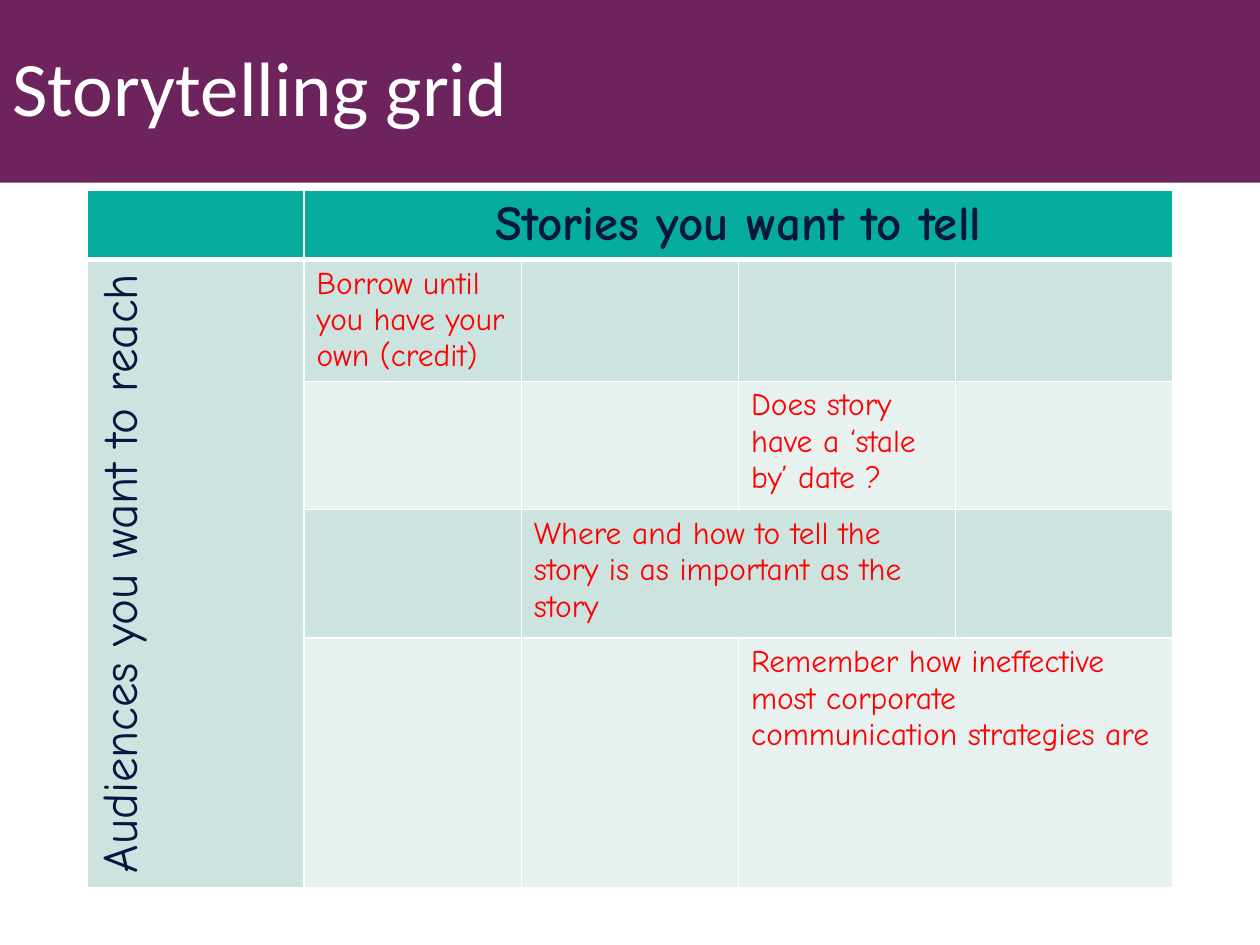
from pptx import Presentation
from pptx.dml.color import RGBColor as Rgb
from pptx.enum.shapes import MSO_SHAPE as Shape
from pptx.enum.text import MSO_ANCHOR as Anchor, PP_ALIGN as Align
from pptx.oxml.ns import qn
from pptx.util import Inches, Pt
from lxml.etree import SubElement as Sub

TITLE = "Storytelling grid"
# (row, column, rows spanned, columns spanned, style, text)
CELLS = [
    (0, 1, 1, 4, "head", "Stories you want to tell"),
    (1, 0, 4, 1, "side", "Audiences you want to reach"),
    (1, 1, 1, 1, "note", "Borrow until you have your own (credit)"),
    (2, 3, 1, 1, "note", "Does story have a ‘stale by’ date ?"),
    (3, 2, 1, 2, "note",
     "Where and how to tell the story is as important as the story"),
    (4, 3, 1, 2, "note",
     "Remember how ineffective most corporate communication strategies are"),
]
ROWS = [0.55, 0.96, 1.02, 1.02, 1.98]
COLS = 5
LEFT, TOP, WIDTH = 0.69, 1.51, 8.62

THEME = {
    "banner": "6D245D", "head": "06AD9E", "bands": ("CCE3DF", "E7F1F0"),
    "line": "FFFFFF", "thin": 1, "thick": 3,
    "text": {
        "title": dict(name="Calibri", size=44, color="FFFFFF", bold=False),
        "head": dict(name="Comic Neue", size=28, color="06173F", bold=True),
        "side": dict(name="Comic Neue", size=28, color="06173F", bold=False),
        "note": dict(name="Comic Neue", size=18, color="FF0000", bold=False),
    },
}


def paint(fill, color):
    fill.solid()
    fill.fore_color.rgb = Rgb.from_string(color)


def write(frame, text, style, align):
    para = frame.paragraphs[0]
    para.alignment = align
    run = para.add_run()
    run.text = text
    for key, value in THEME["text"][style].items():
        if key == "color":
            run.font.color.rgb = Rgb.from_string(value)
        else:
            setattr(run.font, key, Pt(value) if key == "size" else value)
    return para


def edge(cell, row):
    """Rule all four sides, with a thick line between header and body."""
    props = cell._tc.get_or_add_tcPr()
    for side in "LRTB":
        thick = (row, side) in ((0, "B"), (1, "T"))
        width = THEME["thick" if thick else "thin"]
        line = Sub(props, qn(f"a:ln{side}"), w=str(Pt(width)))
        Sub(Sub(line, qn("a:solidFill")), qn("a:srgbClr"), val=THEME["line"])


def add_title(slide):
    box = slide.shapes.add_shape(Shape.RECTANGLE, 0, 0, Inches(10), Inches(1.45))
    box.shadow.inherit = False
    paint(box.fill, THEME["banner"])
    box.line.fill.background()
    box.text_frame.word_wrap = True
    box.text_frame.vertical_anchor = Anchor.MIDDLE
    write(box.text_frame, TITLE, "title", Align.LEFT).line_spacing = 0.9


def add_grid(slide):
    grid = slide.shapes.add_table(
        len(ROWS), COLS, Inches(LEFT), Inches(TOP),
        Inches(WIDTH), Inches(sum(ROWS))).table
    for col in grid.columns:
        col.width = Inches(WIDTH / COLS)
    for r, high in enumerate(ROWS):
        grid.rows[r].height = Inches(high)
        for c in range(COLS):
            cell = grid.cell(r, c)
            edge(cell, r)
            band = THEME["bands"][0 if c == 0 else (r - 1) % 2]
            paint(cell.fill, band if r else THEME["head"])
    for r, c, down, over, style, text in CELLS:
        cell = grid.cell(r, c)
        if down * over > 1:
            cell.merge(grid.cell(r + down - 1, c + over - 1))
        align = Align.LEFT if style == "note" else Align.CENTER
        write(cell.text_frame, text, style, align)
        if style == "side":
            cell._tc.get_or_add_tcPr().set("vert", "vert270")


def main():
    deck = Presentation()
    deck.slide_width, deck.slide_height = Inches(10), Inches(7.5)
    slide = deck.slides.add_slide(deck.slide_layouts[6])
    add_title(slide)
    add_grid(slide)
    deck.save("out.pptx")


if __name__ == "__main__":
    main()
